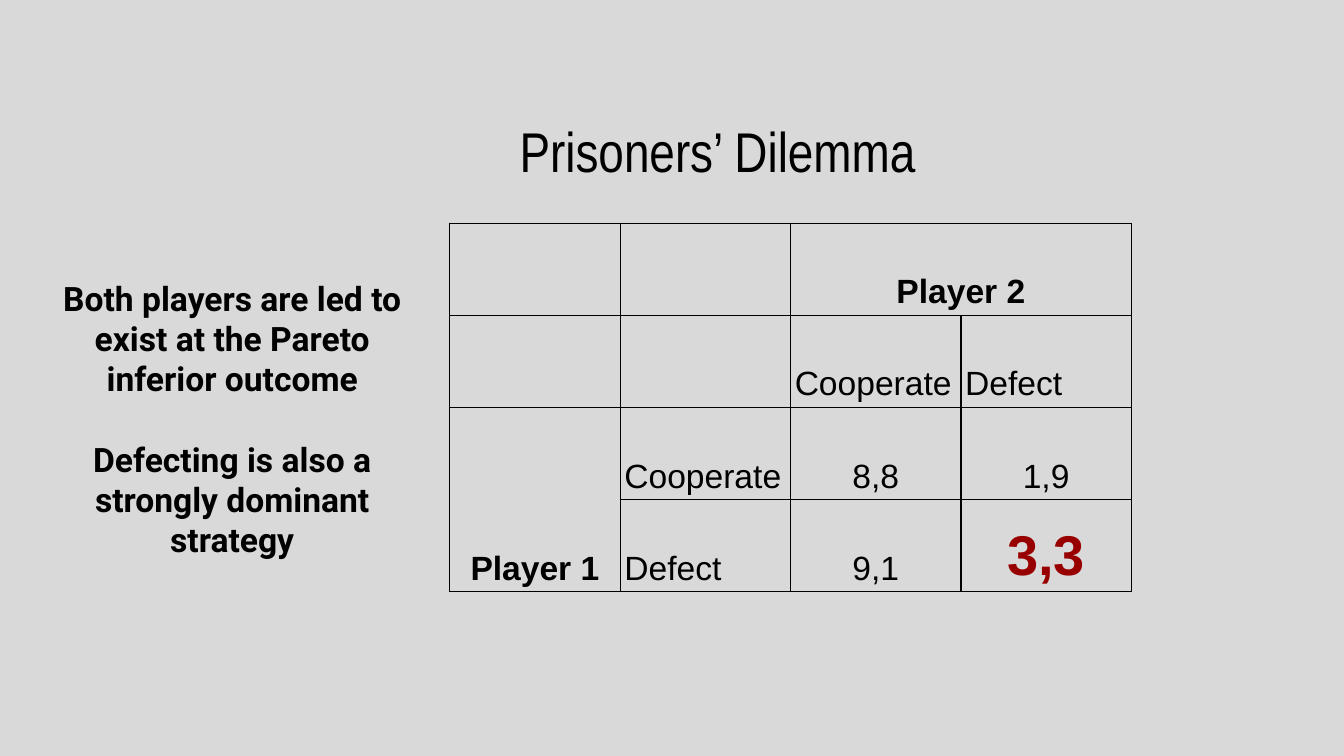
import dataclasses

import lxml.etree
import pptx
import pptx.dml.color
import pptx.enum.text
import pptx.oxml.ns
import pptx.util
from pptx.util import Cm

ALIGN = pptx.enum.text.PP_ALIGN
BLACK = "000000"
GREY = "D9D9D9"
DARK_RED = "980000"


@dataclasses.dataclass
class Style:
    font: str = "Arial"
    size: float = 18
    bold: bool = False
    color: str = BLACK
    align: ALIGN = ALIGN.CENTER


@dataclasses.dataclass
class Entry:
    row: int
    column: int
    text: str
    style: Style


LABEL = Style(align=ALIGN.LEFT)
PLAYER = Style(bold=True)
PAYOFF = Style()
OUTCOME = Style(size=30, bold=True, color=DARK_RED)

ENTRIES = [
    Entry(0, 2, "Player 2", PLAYER),
    Entry(1, 2, "Cooperate", LABEL),
    Entry(1, 3, "Defect", LABEL),
    Entry(2, 0, "Player 1", PLAYER),
    Entry(2, 1, "Cooperate", LABEL),
    Entry(2, 2, "8,8", PAYOFF),
    Entry(2, 3, "1,9", PAYOFF),
    Entry(3, 1, "Defect", LABEL),
    Entry(3, 2, "9,1", PAYOFF),
    Entry(3, 3, "3,3", OUTCOME),
]


def rgb(color: str) -> pptx.dml.color.RGBColor:
    return pptx.dml.color.RGBColor.from_string(color)


def format_paragraph(para, style: Style) -> None:
    para.alignment = style.align
    for span in para.runs:
        span.font.name = style.font
        span.font.size = pptx.util.Pt(style.size)
        span.font.bold = style.bold
        span.font.color.rgb = rgb(style.color)


def add_text(page, left, top, width, height, paragraphs: list[str], style: Style) -> None:
    box = page.shapes.add_textbox(Cm(left), Cm(top), Cm(width), Cm(height))
    frame = box.text_frame
    frame.word_wrap = True
    frame.margin_left = frame.margin_right = Cm(0.25)
    frame.margin_top = frame.margin_bottom = Cm(0.25)
    frame.text = "\n".join(paragraphs)
    for index, para in enumerate(frame.paragraphs):
        format_paragraph(para, style)
        if index:
            para.space_before = pptx.util.Pt(21.5)


def add_borders(cell, color: str, points: float) -> None:
    qn = pptx.oxml.ns.qn
    properties = cell._tc.get_or_add_tcPr()
    for index, side in enumerate(("lnL", "lnR", "lnT", "lnB")):
        line = lxml.etree.Element(qn(f"a:{side}"), w=str(pptx.util.Pt(points)))
        fill = lxml.etree.SubElement(line, qn("a:solidFill"))
        lxml.etree.SubElement(fill, qn("a:srgbClr"), val=color)
        properties.insert(index, line)


def add_payoff_table(page, left: float, top: float, column_width: float, row_height: float) -> None:
    size = 4
    table = page.shapes.add_table(
        size, size, Cm(left), Cm(top), Cm(size * column_width), Cm(size * row_height)
    ).table
    table.first_row = table.horz_banding = False
    for column in table.columns:
        column.width = Cm(column_width)
    for row in table.rows:
        row.height = Cm(row_height)

    for cell in table.iter_cells():
        cell.margin_left = cell.margin_right = Cm(0.08)
        cell.margin_top = cell.margin_bottom = Cm(0.08)
        cell.vertical_anchor = pptx.enum.text.MSO_ANCHOR.BOTTOM
        cell.fill.background()
        add_borders(cell, BLACK, 0.75)

    # Player headings span their two strategies
    table.cell(0, 2).merge(table.cell(0, 3))
    table.cell(2, 0).merge(table.cell(3, 0))

    for entry in ENTRIES:
        cell = table.cell(entry.row, entry.column)
        cell.text_frame.text = entry.text
        para = cell.text_frame.paragraphs[0]
        format_paragraph(para, entry.style)
        para.line_spacing = 1.15

    # Highlighted outcome
    outcome = table.cell(3, 3)
    outcome.fill.solid()
    outcome.fill.fore_color.rgb = rgb(GREY)


def main() -> None:
    deck = pptx.Presentation()
    deck.slide_width, deck.slide_height = Cm(25.4), Cm(14.29)
    page = deck.slides.add_slide(deck.slide_layouts[6])
    page.background.fill.solid()
    page.background.fill.fore_color.rgb = rgb(GREY)

    # Title
    add_text(page, 1.73, 1.96, 23.67, 1.6, ["Prisoners’ Dilemma"],
             Style(font="Arial Narrow", size=30))

    # Payoff matrix
    add_payoff_table(page, left=8.5, top=4.22, column_width=3.22, row_height=1.74)

    # Commentary
    add_text(page, 0.86, 5, 7.06, 6.48,
             ["Both players are led to exist at the Pareto inferior outcome",
              "Defecting is also a strongly dominant strategy"],
             Style(font="Roboto", bold=True))

    deck.save("out.pptx")


if __name__ == "__main__":
    main()
